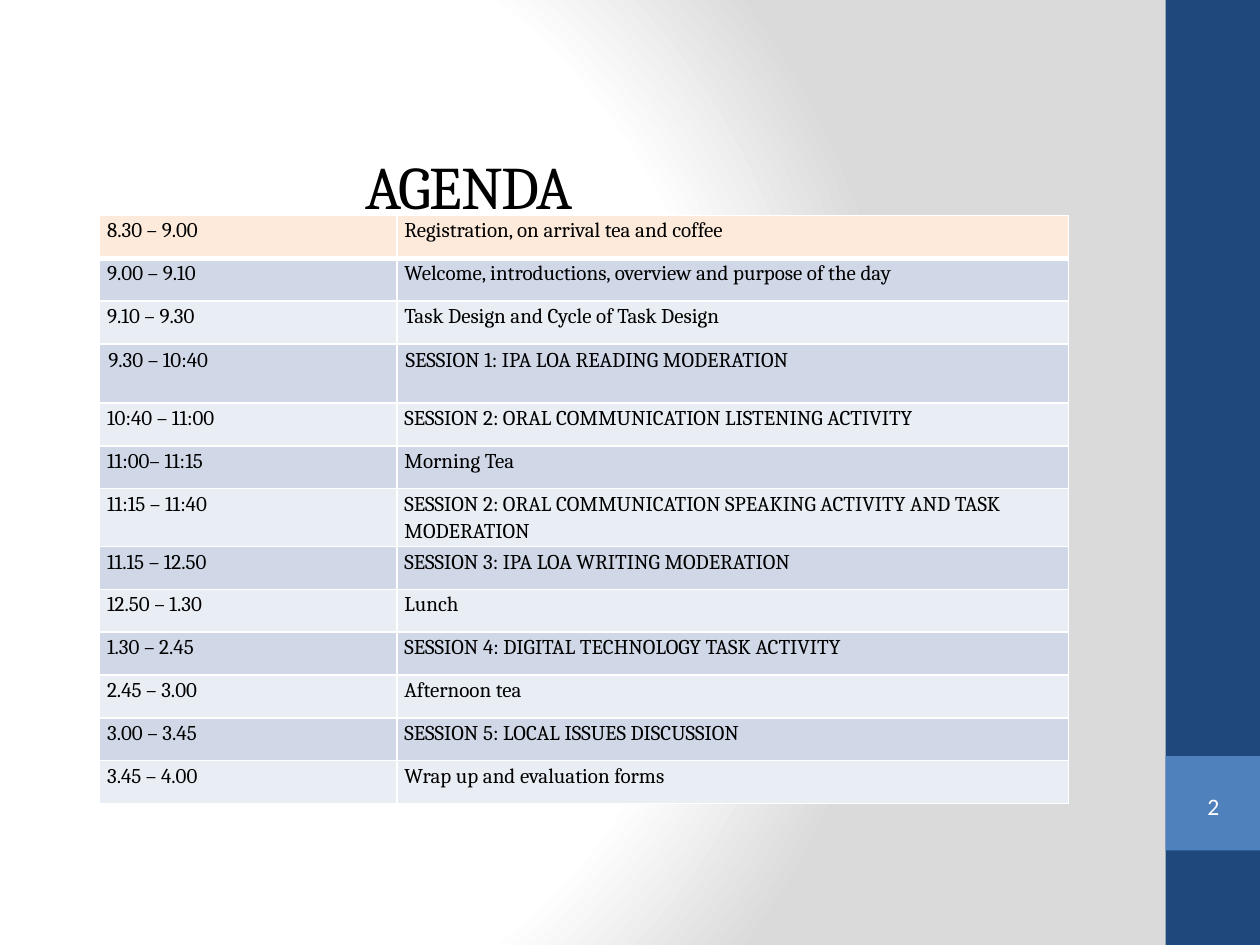
"""Build the agenda slide of a moderation day."""
import pptx
import pptx.util
import pptx.dml.color
import pptx.enum.shapes
import pptx.enum.text
import pptx.oxml
import pptx.oxml.ns
from pptx.util import Inches

AGENDA = [
    ("8.30 – 9.00", "Registration, on arrival tea and coffee"),
    ("9.00 – 9.10", "Welcome, introductions, overview and purpose of the day"),
    ("9.10 – 9.30", "Task Design and Cycle of Task Design"),
    ("9.30 – 10:40", "SESSION 1: IPA LOA READING MODERATION"),
    ("10:40 – 11:00", "SESSION 2: ORAL COMMUNICATION LISTENING ACTIVITY"),
    ("11:00– 11:15", "Morning Tea"),
    ("11:15 – 11:40", "SESSION 2: ORAL COMMUNICATION SPEAKING ACTIVITY AND TASK MODERATION"),
    ("11.15 – 12.50", "SESSION 3: IPA LOA WRITING MODERATION"),
    ("12.50 – 1.30", "Lunch"),
    ("1.30 – 2.45", "SESSION 4: DIGITAL TECHNOLOGY TASK ACTIVITY"),
    ("2.45 – 3.00", "Afternoon tea"),
    ("3.00 – 3.45", "SESSION 5: LOCAL ISSUES DISCUSSION"),
    ("3.45 – 4.00", "Wrap up and evaluation forms"),
]
COLUMN_WIDTHS = (2.36, 5.33)
ROW_HEIGHT = 0.34
TALL_ROWS = {3: 0.47, 6: 0.46}
FIRST_SESSION = 3


def color(value):
    return pptx.dml.color.RGBColor.from_string(value)


def apply(target, values):
    for name, value in values.items():
        setattr(target, name, value)


class AgendaSlide:
    header, bands = "FDEADA", ("E9EDF4", "D0D8E8")
    serif, sans = "Cambria", "Calibri"

    def __init__(self, slide):
        self.slide = slide

    def put_text(self, frame, text, font, size, ink, layout, spacing):
        apply(frame, {"word_wrap": True, **layout})
        paragraph = frame.paragraphs[0]
        apply(paragraph, spacing)
        run = paragraph.add_run()
        run.text = text
        apply(run.font, {"name": font, "size": pptx.util.Pt(size)})
        run.font.color.rgb = color(ink)
        return run

    def background(self, stops, focus):
        self.slide.background.fill.solid()
        properties = self.slide.element.find(".//" + pptx.oxml.ns.qn("p:bgPr"))
        marks = "".join(
            f'<a:gs pos="{place * 1000}"><a:srgbClr val="{tint}"/></a:gs>'
            for place, tint in stops)
        sides = " ".join(f'{side}="{share * 1000}"' for side, share in zip("ltrb", focus))
        gradient = pptx.oxml.parse_xml(
            f'<a:gradFill {pptx.oxml.ns.nsdecls("a")} rotWithShape="1">'
            f'<a:gsLst>{marks}</a:gsLst>'
            f'<a:path path="circle"><a:fillToRect {sides}/></a:path></a:gradFill>')
        properties.replace(properties[0], gradient)

    def panel(self, left, top, width, height, fill):
        panel = self.slide.shapes.add_shape(
            pptx.enum.shapes.MSO_SHAPE.RECTANGLE, *map(Inches, (left, top, width, height)))
        panel.shadow.inherit = False
        panel.fill.solid()
        panel.fill.fore_color.rgb = color(fill)
        panel.line.fill.background()

    def title(self, text, left, top, width, height, indent):
        heading = self.slide.shapes.title
        apply(heading, dict(zip(("left", "top", "width", "height"),
                                map(Inches, (left, top, width, height)))))
        run = self.put_text(
            heading.text_frame, text, self.serif, 34.5, "000000",
            {"margin_left": Inches(indent),
             "vertical_anchor": pptx.enum.text.MSO_ANCHOR.MIDDLE},
            {"alignment": pptx.enum.text.PP_ALIGN.LEFT})
        run.font._element.set("spc", "-80")

    def page_number(self, text, left, top, width, height):
        number = self.slide.shapes.add_shape(
            pptx.enum.shapes.MSO_SHAPE.DOUBLE_BRACKET,
            *map(Inches, (left, top, width, height)))
        number.shadow.inherit = False
        number.fill.background()
        number.line.fill.background()
        margins = dict.fromkeys(
            ("margin_left", "margin_top", "margin_right", "margin_bottom"), 0)
        self.put_text(number.text_frame, text, self.sans, 13.5, "FFFFFF",
                      {**margins, "vertical_anchor": pptx.enum.text.MSO_ANCHOR.MIDDLE},
                      {"alignment": pptx.enum.text.PP_ALIGN.CENTER})

    def borders(self, cell, weights):
        properties = cell._tc.get_or_add_tcPr()
        for side, weight in weights.items():
            properties.append(pptx.oxml.parse_xml(
                f'<a:ln{side} {pptx.oxml.ns.nsdecls("a")} w="{pptx.util.Pt(weight)}">'
                '<a:solidFill><a:srgbClr val="FFFFFF"/></a:solidFill>'
                f'</a:ln{side}>'))

    def agenda_cell(self, cell, text, index):
        self.borders(cell, {"L": 1, "R": 1, "T": 3 if index == 1 else 1,
                            "B": 3 if index == 0 else 1})
        cell.fill.solid()
        cell.fill.fore_color.rgb = color(self.bands[index % 2] if index else self.header)
        inset, gap, spacing = 0.06, 0, {"line_spacing": 1.15,
                                        "space_after": pptx.util.Pt(8)}
        if index == FIRST_SESSION:
            inset, gap, spacing = 0.07, 0.04, {}
        apply(cell, {"margin_left": Inches(inset), "margin_right": Inches(inset),
                     "margin_top": Inches(gap), "margin_bottom": Inches(gap)})
        self.put_text(cell.text_frame, text, self.serif, 12, "000000", {}, spacing)

    def agenda(self, entries, left, top):
        heights = [TALL_ROWS.get(index, ROW_HEIGHT) for index in range(len(entries))]
        table = self.slide.shapes.add_table(
            len(entries), len(COLUMN_WIDTHS), Inches(left), Inches(top),
            Inches(sum(COLUMN_WIDTHS)), Inches(sum(heights))).table
        apply(table, {"first_row": False, "horz_banding": False})
        for column, width in zip(table.columns, COLUMN_WIDTHS):
            column.width = Inches(width)
        for index, (row, entry) in enumerate(zip(table.rows, entries)):
            row.height = Inches(heights[index])
            for cell, text in zip(row.cells, entry):
                self.agenda_cell(cell, text, index)


def main():
    deck = pptx.Presentation()
    apply(deck, {"slide_width": Inches(10), "slide_height": Inches(7.5)})
    page = AgendaSlide(deck.slides.add_slide(deck.slide_layouts.get_by_name("Title Only")))
    page.background([(0, "FFFFFF"), (75, "FFFFFF"), (100, "DADADA")], (20, 50, 100, 50))
    page.panel(9.25, 0, 0.75, 7.5, "1F497D")
    page.panel(9.25, 6, 0.75, 0.75, "4F81BD")
    page.title("AGENDA", 0.5, 1.17, 9, 0.6, indent=2.4)
    page.agenda(AGENDA, 0.79, 1.71)
    page.page_number("2", 9.33, 6.18, 0.6, 0.43)
    deck.save("out.pptx")


if __name__ == "__main__":
    main()
